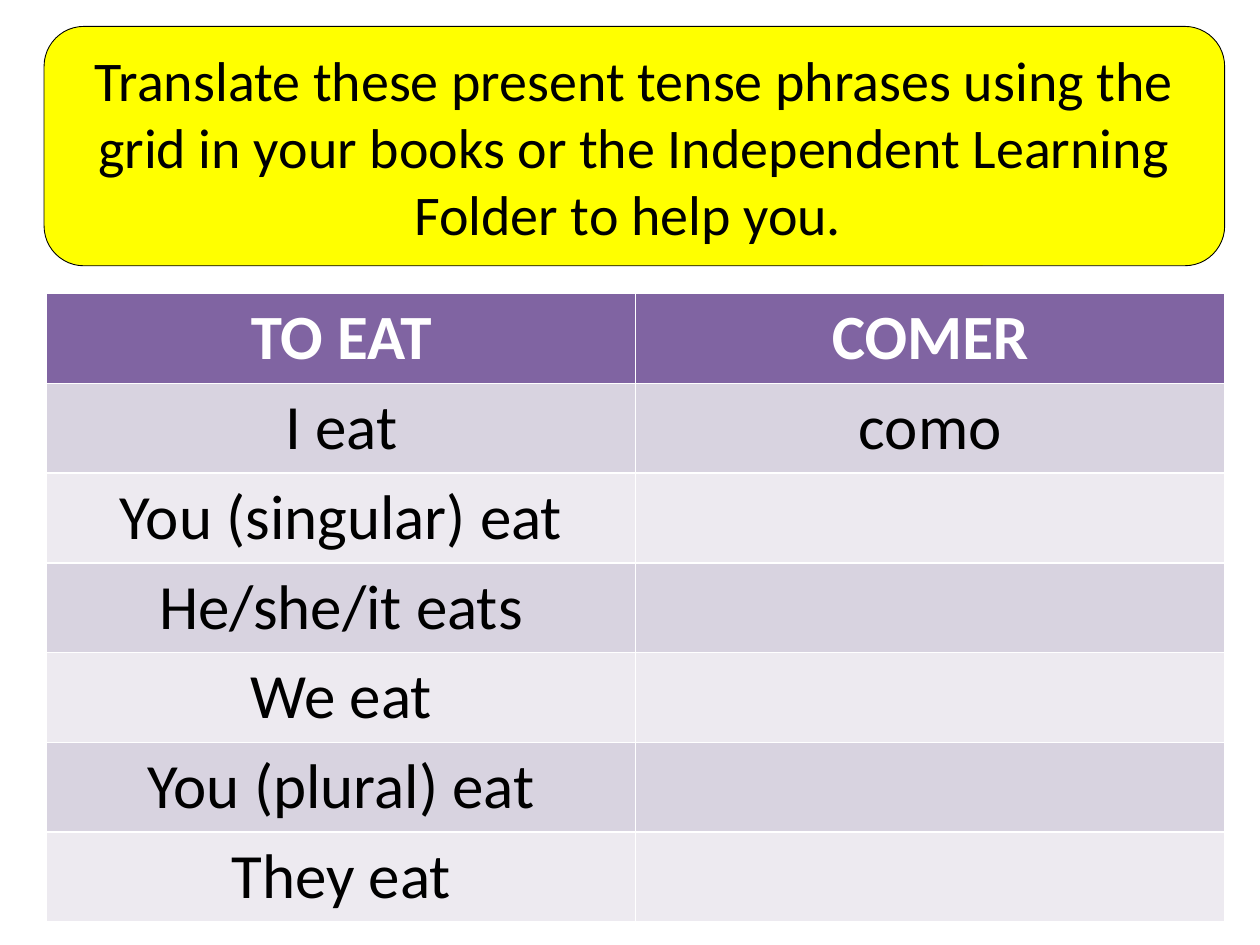
from pptx import Presentation
from pptx.dml.color import RGBColor as RGB
from pptx.enum.shapes import MSO_SHAPE as SHAPE
from pptx.enum.text import MSO_ANCHOR as ANCHOR, PP_ALIGN as ALIGN
from pptx.util import Inches, Pt

TASK = ("Translate these present tense phrases using the grid in your books "
        "or the Independent Learning Folder to help you. ")
VERBS = [
    ("TO EAT", "COMER"),
    ("I eat", "como"),
    ("You (singular) eat", ""),
    ("He/she/it eats", ""),
    ("We eat", ""),
    ("You (plural) eat", ""),
    ("They eat", ""),
]
THEME = {
    "font": "Calibri", "task": 32, "cell": 36,
    "ink": "000000", "light": "FFFFFF", "note": "FFFF00",
    "head": "8064A2", "bands": ("D8D3E0", "EDEAF0"),
}
BOX = (0.35, 0.21, 9.37, 1.9)
GRID = (0.37, 2.33, 9.35, 4.9)


def paint(part, tone):
    part.fill.solid()
    part.fill.fore_color.rgb = RGB.from_string(tone)


def write(frame, text, size, tone, bold=False):
    para = frame.paragraphs[0]
    para.alignment = ALIGN.CENTER
    if not text:
        return
    run = para.add_run()
    run.text = text
    font = run.font
    font.name, font.size, font.bold = THEME["font"], Pt(size), bold
    font.color.rgb = RGB.from_string(tone)


def add_task(slide):
    box = slide.shapes.add_shape(SHAPE.ROUNDED_RECTANGLE, *map(Inches, BOX))
    box.shadow.inherit = False
    paint(box, THEME["note"])
    box.line.color.rgb = RGB.from_string(THEME["ink"])
    box.line.width = Pt(0.5)
    frame = box.text_frame
    frame.word_wrap = True
    frame.vertical_anchor = ANCHOR.MIDDLE
    write(frame, TASK, THEME["task"], THEME["ink"])


def add_grid(slide):
    rows, cols = len(VERBS), len(VERBS[0])
    table = slide.shapes.add_table(rows, cols, *map(Inches, GRID)).table
    for r, pair in enumerate(VERBS):
        head = r == 0
        fill = THEME["head"] if head else THEME["bands"][(r - 1) % 2]
        tone = THEME["light"] if head else THEME["ink"]
        for c, text in enumerate(pair):
            cell = table.cell(r, c)
            paint(cell, fill)
            write(cell.text_frame, text, THEME["cell"], tone, head)


def main():
    deck = Presentation()
    deck.slide_width, deck.slide_height = Inches(10), Inches(7.5)
    slide = deck.slides.add_slide(deck.slide_layouts[6])
    add_task(slide)
    add_grid(slide)
    deck.save("out.pptx")


if __name__ == "__main__":
    main()
